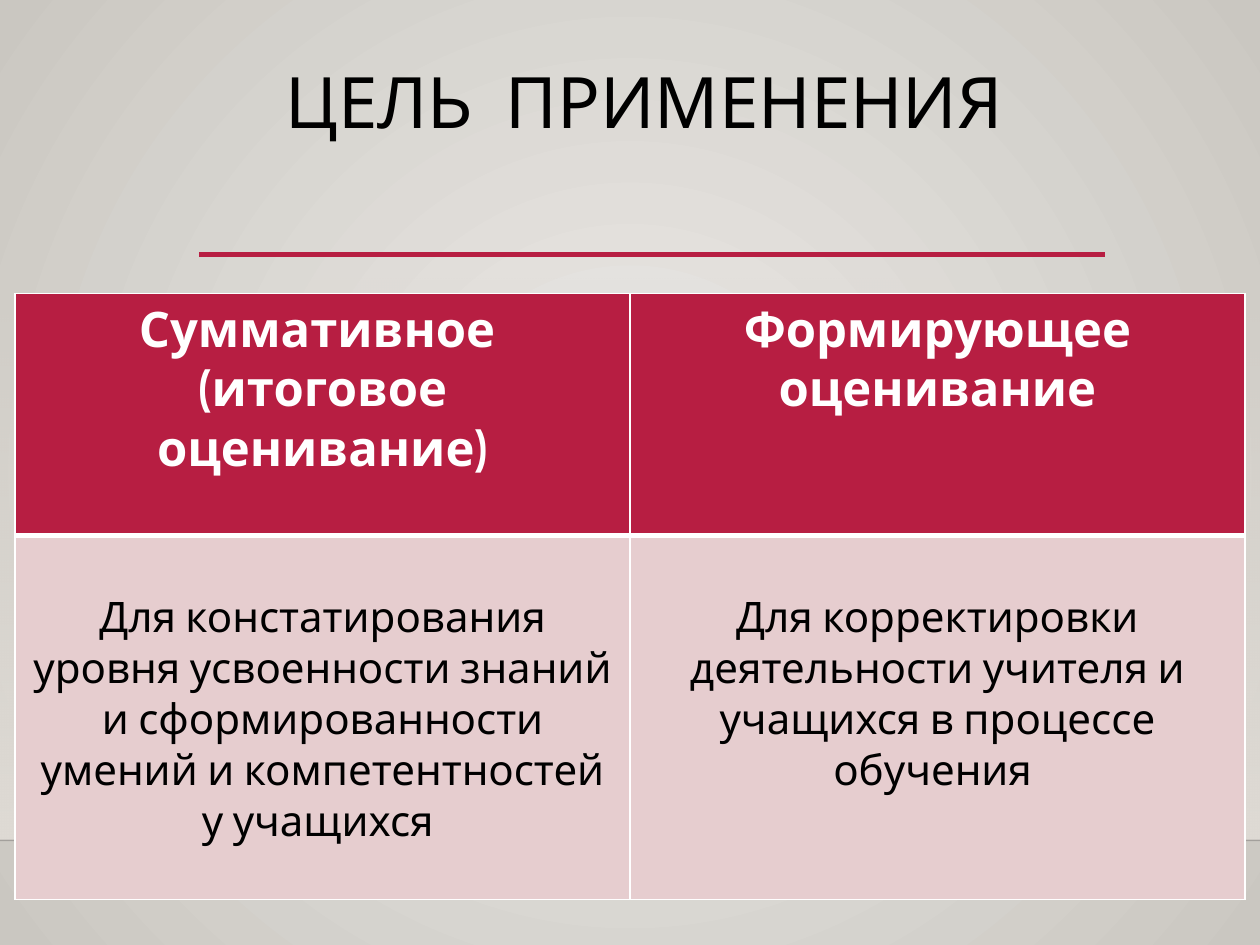
from lxml.etree import SubElement
from pptx import Presentation
from pptx.dml.color import RGBColor
from pptx.enum.shapes import MSO_CONNECTOR, MSO_SHAPE
from pptx.enum.text import MSO_ANCHOR, PP_ALIGN
from pptx.oxml import parse_xml
from pptx.oxml.ns import nsdecls, qn
from pptx.util import Inches, Pt

BLACK = RGBColor(0x00, 0x00, 0x00)
WHITE = RGBColor(0xFF, 0xFF, 0xFF)
CRIMSON = RGBColor(0xB7, 0x1E, 0x42)
PINK = RGBColor(0xE6, 0xCD, 0xCF)
GLOW = RGBColor(0xEC, 0xEA, 0xE7)
STONE = RGBColor(0xCA, 0xC7, 0xC1)
FLOOR = RGBColor(0xDF, 0xDB, 0xD5)
FONT = "Cabin"


class SlideBuilder:
    def __init__(self, slide):
        self.slide = slide

    def gradient(self, fill, colors):
        fill.gradient()
        for stop, color, position in zip(fill.gradient_stops, colors, (0, 1)):
            stop.color.rgb = color
            stop.position = position

    def background(self, center, edge):
        self.gradient(self.slide.background.fill, (center, edge))
        grad = self.slide.element.find(".//" + qn("a:gradFill"))
        grad.replace(grad.find(qn("a:lin")), parse_xml(
            f'<a:path {nsdecls("a")} path="circle"><a:fillToRect '
            'l="50000" t="50000" r="50000" b="50000"/></a:path>'))

    def fading_band(self, left, top, width, height, color):
        band = self.slide.shapes.add_shape(
            MSO_SHAPE.RECTANGLE, Inches(left), Inches(top), Inches(width), Inches(height))
        band.shadow.inherit = False
        band.line.fill.background()
        self.gradient(band.fill, (color, color))
        band.fill.gradient_angle = 270
        first_color = band.element.find(".//" + qn("a:srgbClr"))
        SubElement(first_color, qn("a:alpha"), val="0")

    def rule(self, left, right, y, color, weight, opacity=100):
        rule = self.slide.shapes.add_connector(
            MSO_CONNECTOR.STRAIGHT, Inches(left), Inches(y), Inches(right), Inches(y))
        rule.line.color.rgb = color
        rule.line.width = Pt(weight)
        properties = rule.element.spPr
        if opacity < 100:
            SubElement(properties.find(".//" + qn("a:srgbClr")), qn("a:alpha"),
                       val=str(opacity * 1000))
        SubElement(properties, qn("a:effectLst"))

    def add_lines(self, frame, lines, size, color, bold=False, spacing=None):
        for index, line in enumerate(lines):
            paragraph = frame.add_paragraph() if index else frame.paragraphs[0]
            paragraph.alignment = PP_ALIGN.CENTER
            paragraph.line_spacing = spacing
            run = paragraph.add_run()
            run.text = line
            run.font.name = FONT
            run.font.size = Pt(size)
            run.font.bold = bold
            run.font.color.rgb = color

    def title(self, left, top, width, height, text):
        frame = self.slide.shapes.add_textbox(
            Inches(left), Inches(top), Inches(width), Inches(height)).text_frame
        frame.word_wrap = True
        frame.vertical_anchor = MSO_ANCHOR.TOP
        frame.margin_top = Inches(0.01)
        self.add_lines(frame, [text], 40.5, BLACK, spacing=0.9)

    def borders(self, cell, bottom):
        weights = {"lnL": 1, "lnR": 1, "lnT": 1, "lnB": bottom}
        for index, (side, weight) in enumerate(weights.items()):
            cell._tc.get_or_add_tcPr().insert(index, parse_xml(
                f'<a:{side} {nsdecls("a")} w="{Pt(weight)}"><a:solidFill>'
                f'<a:srgbClr val="{WHITE}"/></a:solidFill></a:{side}>'))

    def comparison(self, left, top, column_width, heights, rows):
        table = self.slide.shapes.add_table(
            len(rows), len(rows[0]), Inches(left), Inches(top),
            Inches(column_width * len(rows[0])), Inches(sum(heights))).table
        for column in table.columns:
            column.width = Inches(column_width)
        for r, texts in enumerate(rows):
            header = r == 0
            table.rows[r].height = Inches(heights[r])
            for c, lines in enumerate(texts):
                cell = table.cell(r, c)
                cell.fill.solid()
                cell.fill.fore_color.rgb = CRIMSON if header else PINK
                cell.margin_top = Inches(0.05 if header else 0.45)
                self.borders(cell, 3 if header else 1)
                self.add_lines(cell.text_frame, lines, 28 if header else 24,
                               WHITE if header else BLACK, bold=header)


def main():
    deck = Presentation()
    deck.slide_width, deck.slide_height = Inches(10), Inches(7.5)
    builder = SlideBuilder(deck.slides.add_slide(deck.slide_layouts[6]))
    builder.background(GLOW, STONE)
    builder.fading_band(0, 2.2, 10, 4.46, FLOOR)
    builder.rule(0, 10, 6.67, BLACK, 1, opacity=20)
    builder.rule(1.58, 8.77, 2.02, CRIMSON, 2.5)
    builder.title(1.69, 0.52, 6.85, 1.09, "ЦЕЛЬ  ПРИМЕНЕНИЯ")
    builder.comparison(0.12, 2.33, 4.88, (1.92, 2.89), [
        [["Суммативное ", "(итоговое оценивание)"], ["Формирующее оценивание"]],
        [["Для констатирования уровня усвоенности знаний и сформированности "
          "умений и компетентностей у учащихся "],
         ["Для корректировки деятельности учителя и учащихся в процессе обучения "]],
    ])
    deck.save("out.pptx")


if __name__ == "__main__":
    main()
